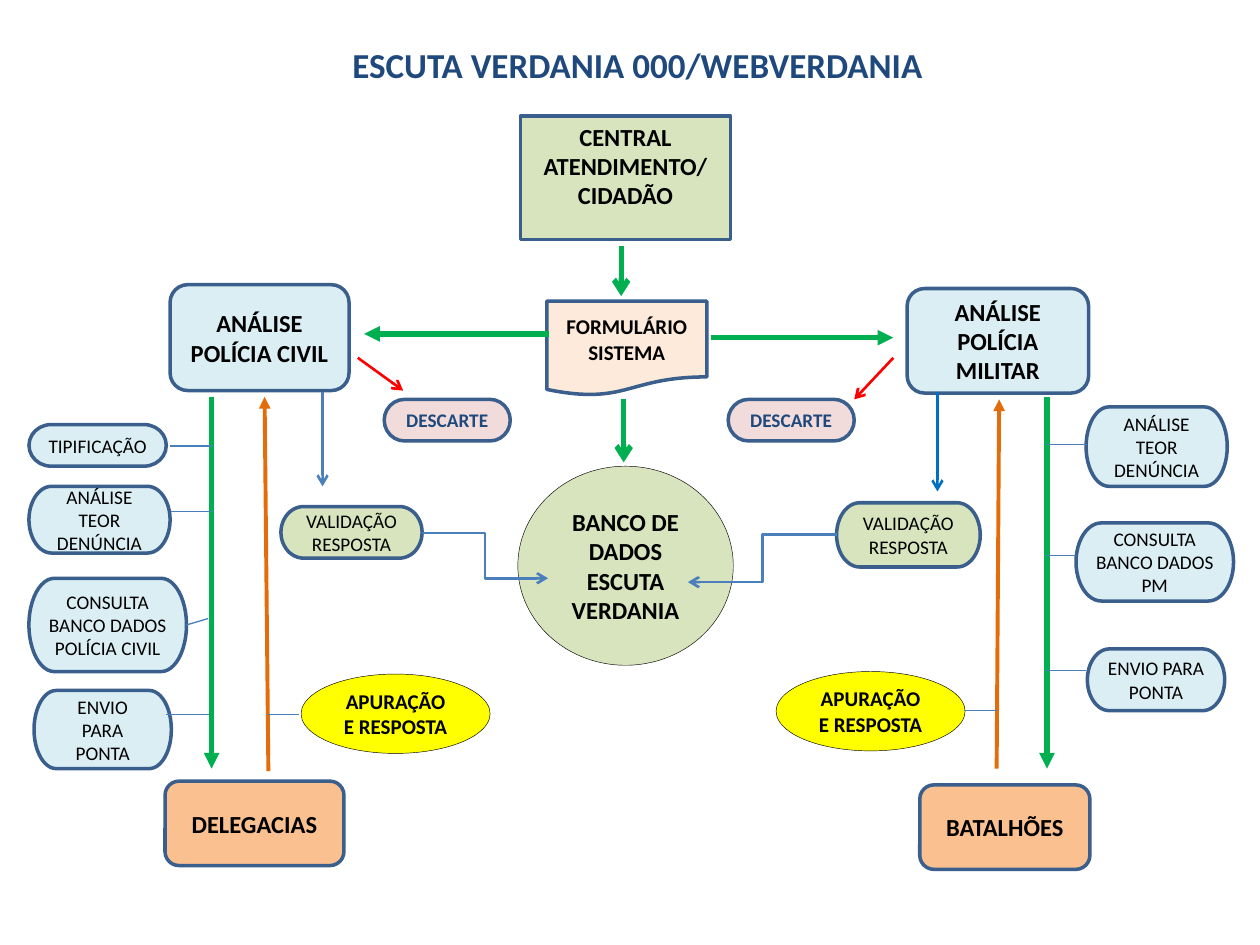
from dataclasses import dataclass

from lxml.etree import SubElement
from pptx import Presentation
from pptx.dml.color import RGBColor
from pptx.enum.shapes import MSO_CONNECTOR, MSO_SHAPE
from pptx.enum.text import MSO_ANCHOR, PP_ALIGN
from pptx.oxml.ns import qn
from pptx.util import Inches, Pt


@dataclass(frozen=True)
class Theme:
    font: str = "Calibri"
    ink: str = "000000"
    navy: str = "1F497D"
    border: str = "3A5F8C"
    link: str = "4B7EBC"
    bright_blue: str = "0070C0"
    green: str = "00B050"
    orange: str = "E46C0A"
    red: str = "FF0000"
    yellow: str = "FFFF00"
    pale_green: str = "D7E4BD"
    pale_blue: str = "DBEEF4"
    peach: str = "FAC090"
    cream: str = "FDEADA"
    pink: str = "F2DCDB"
    title: int = 20
    large: int = 14
    medium: int = 12
    small: int = 11


THEME = Theme()
COLUMNS, ROWS = 100, 75

# Content: positions are (column, row, columns wide, rows high)
TITLE = ("ESCUTA VERDANIA 000/WEBVERDANIA", (26.4, 2.8, 48.4, 4.6))

# Kind: preset, fill, border colour, border width, text size, bold, text colour
KINDS = {
    "source": (MSO_SHAPE.RECTANGLE, THEME.pale_green, THEME.border, 2, THEME.large, True, THEME.ink),
    "form": (MSO_SHAPE.FLOWCHART_DOCUMENT, THEME.cream, THEME.border, 2, THEME.medium, True, THEME.ink),
    "database": (MSO_SHAPE.OVAL, THEME.pale_green, THEME.ink, 0.25, THEME.large, True, THEME.ink),
    "analysis": (MSO_SHAPE.ROUNDED_RECTANGLE, THEME.pale_blue, THEME.border, 2, THEME.large, True, THEME.ink),
    "unit": (MSO_SHAPE.ROUNDED_RECTANGLE, THEME.peach, THEME.border, 2, THEME.large, True, THEME.ink),
    "answer": (MSO_SHAPE.OVAL, THEME.yellow, THEME.ink, 0.25, THEME.medium, True, THEME.ink),
    "step": (MSO_SHAPE.FLOWCHART_TERMINATOR, THEME.pale_blue, THEME.border, 2, THEME.small, False, THEME.ink),
    "validation": (MSO_SHAPE.FLOWCHART_TERMINATOR, THEME.pale_green, THEME.border, 2, THEME.small, False, THEME.ink),
    "discard": (MSO_SHAPE.FLOWCHART_TERMINATOR, THEME.pink, THEME.border, 2, THEME.small, True, THEME.navy),
}

NODES = [
    # Centre
    ("source", ["CENTRAL ATENDIMENTO/", "CIDADÃO"], (41.3, 9.2, 16.7, 9.8)),
    ("form", ["FORMULÁRIO", "SISTEMA"], (43.4, 23.9, 12.7, 7.5)),
    ("database", ["BANCO DE DADOS ESCUTA VERDANIA"], (41.1, 37, 17.1, 15.8)),
    # Civil police
    ("analysis", ["ANÁLISE POLÍCIA CIVIL"], (13.5, 22.6, 14.2, 8.4)),
    ("discard", ["DESCARTE"], (30.5, 31.7, 10, 3.3)),
    ("validation", ["VALIDAÇÃO", "RESPOSTA"], (22.3, 40.2, 11.2, 4.1)),
    ("step", ["TIPIFICAÇÃO"], (2.3, 33.7, 10.9, 3.3)),
    ("step", ["ANÁLISE", "TEOR DENÚNCIA"], (2.3, 38.6, 11.2, 5.3)),
    ("step", ["CONSULTA BANCO DADOS POLÍCIA CIVIL"], (2.3, 45.9, 12.5, 7.4)),
    ("step", ["ENVIO", "PARA PONTA"], (2.7, 54.8, 10.9, 6.2)),
    ("answer", ["APURAÇÃO E RESPOSTA"], (23.9, 53.5, 15, 6.3)),
    ("unit", ["DELEGACIAS"], (13.1, 62, 14.2, 6.7)),
    # Military police
    ("analysis", ["ANÁLISE POLÍCIA MILITAR"], (72, 22.9, 14.4, 8.3)),
    ("discard", ["DESCARTE"], (57.8, 31.7, 10, 3.3)),
    ("validation", ["VALIDAÇÃO", "RESPOSTA"], (66.4, 39.9, 11.4, 5.1)),
    ("step", ["ANÁLISE", "TEOR DENÚNCIA"], (86.2, 32.3, 11.2, 6.3)),
    ("step", ["CONSULTA BANCO DADOS PM"], (85.4, 41.5, 12.5, 6.2)),
    ("step", ["ENVIO PARA PONTA"], (86.3, 51.5, 10.9, 4.9)),
    ("answer", ["APURAÇÃO E RESPOSTA"], (61.6, 53.3, 15, 6.3)),
    ("unit", ["BATALHÕES"], (73, 62.3, 13.5, 6.7)),
]

# Each group: colour, width, arrowhead, connector type, (x1, y1, x2, y2) list
STRAIGHT, ELBOW = MSO_CONNECTOR.STRAIGHT, MSO_CONNECTOR.ELBOW
LINKS = [
    # Dispatch to the units and distribution from the form
    (THEME.green, 3, "triangle", STRAIGHT, [
        (16.8, 31.5, 16.8, 61), (83.1, 31.5, 83.1, 61),
        (56.4, 26.8, 70.9, 26.8), (43.6, 26.5, 28.9, 26.5)]),
    (THEME.green, 3, "arrow", STRAIGHT, [
        (49.3, 19.5, 49.3, 23.5), (49.5, 31.7, 49.5, 36.7)]),
    # Answers coming back
    (THEME.orange, 2.25, "triangle", STRAIGHT, [
        (21.3, 61.2, 21, 31.5), (79.1, 61, 79.3, 31.7)]),
    # Discards
    (THEME.red, 1.5, "arrow", STRAIGHT, [
        (28.4, 28.4, 32, 31), (70.9, 28.4, 67.8, 31.7)]),
    # Validation
    (THEME.link, 1.5, "arrow", STRAIGHT, [(25.6, 31.1, 25.6, 38.6)]),
    (THEME.bright_blue, 1.5, "arrow", STRAIGHT, [(74.4, 31.1, 74.4, 39)]),
    (THEME.link, 1.5, "arrow", ELBOW, [
        (33.5, 42.3, 43.5, 45.9), (66.4, 42.4, 54.6, 46.2)]),
    # Ticks from the steps to the arrows
    (THEME.link, 0.75, None, STRAIGHT, [
        (13.5, 35.4, 16.8, 35.4), (13.6, 40.6, 16.9, 40.6),
        (14.8, 49.6, 16.5, 49.1), (13.2, 56.7, 16.6, 56.7),
        (21.2, 56.7, 23.7, 56.7), (76.5, 56.4, 79.1, 56.4),
        (83, 35.3, 86.3, 35.3), (82.9, 44.1, 85.4, 44.1),
        (82.9, 53.2, 86.2, 53.2)]),
]

deck = Presentation()
deck.slide_width, deck.slide_height = Inches(10), Inches(7.5)
page = deck.slides.add_slide(deck.slide_layouts[5])


def on_grid(values):
    """Turn alternating column and row counts into slide lengths."""
    units = (deck.slide_width / COLUMNS, deck.slide_height / ROWS)
    return [round(value * units[i % 2]) for i, value in enumerate(values)]


def write(box, lines, size, bold, color):
    frame = box.text_frame
    frame.word_wrap = True
    frame.vertical_anchor = MSO_ANCHOR.MIDDLE
    frame.text = "\n".join(lines)
    for para in frame.paragraphs:
        para.alignment = PP_ALIGN.CENTER
        for span in para.runs:
            formats = {"name": THEME.font, "size": Pt(size), "bold": bold}
            for name, value in formats.items():
                setattr(span.font, name, value)
            span.font.color.rgb = RGBColor.from_string(color)


def add_node(kind, lines, place):
    preset, fill, border, width, size, bold, color = KINDS[kind]
    box = page.shapes.add_shape(preset, *on_grid(place))
    box.shadow.inherit = False
    box.fill.solid()
    box.fill.fore_color.rgb = RGBColor.from_string(fill)
    box.line.color.rgb = RGBColor.from_string(border)
    box.line.width = Pt(width)
    write(box, lines, size, bold, color)
    if kind == "source":  # text sits a little above the middle
        box.text_frame.margin_bottom = Inches(0.24)


def add_link(color, width, head, connector_type, ends):
    link = page.shapes.add_connector(connector_type, *on_grid(ends))
    link.line.color.rgb = RGBColor.from_string(color)
    link.line.width = Pt(width)
    if head:
        SubElement(link.line._get_or_add_ln(), qn("a:tailEnd"), type=head)
    SubElement(link._element.spPr, qn("a:effectLst"))


# Title
heading, title_place = TITLE
title = page.shapes.title
for side, length in zip(("left", "top", "width", "height"), on_grid(title_place)):
    setattr(title, side, length)
write(title, [heading], THEME.title, True, THEME.navy)
title.text_frame.word_wrap = False

# Nodes, then the links between them
for node in NODES:
    add_node(*node)
for *style, routes in LINKS:
    for route in routes:
        add_link(*style, route)

deck.save("out.pptx")
